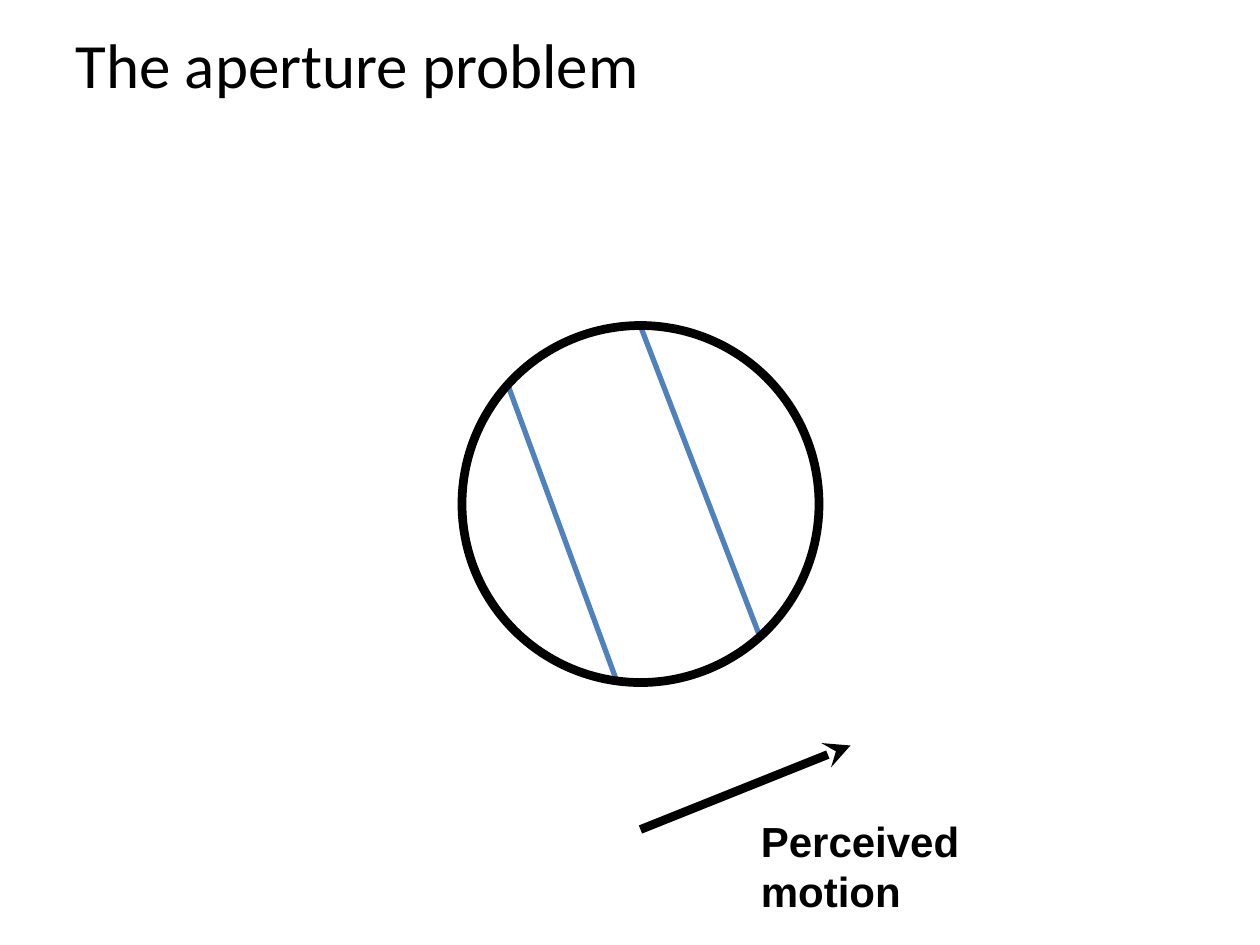
"""Build the aperture problem slide."""
from typing import NamedTuple, Optional

from lxml.etree import SubElement
from pptx import Presentation
from pptx.dml.color import RGBColor
from pptx.enum.shapes import MSO_CONNECTOR as Connector, MSO_SHAPE as Shape
from pptx.enum.text import MSO_ANCHOR as Anchor, MSO_AUTO_SIZE as AutoSize, PP_ALIGN as Align
from pptx.oxml.ns import qn
from pptx.util import Pt

BLACK = "000000"
BLUE = "4F81BD"


class Line(NamedTuple):
    start: tuple[float, float]
    end: tuple[float, float]
    color: str
    width: float
    arrowhead: Optional[str] = None


GRATING = [
    Line((290.88, 221.76), (352.8, 390.24), BLUE, 3),
    Line((365.76, 185.76), (434.16, 363.6), BLUE, 3),
]
MOTION_ARROW = Line((366, 474), (486, 426), BLACK, 5, "stealth")


def rgb(color: str) -> RGBColor:
    return RGBColor.from_string(color)


def place(shape, left: float, top: float, width: float, height: float) -> None:
    shape.left, shape.top = Pt(left), Pt(top)
    shape.width, shape.height = Pt(width), Pt(height)


def draw_line(slide, line: Line) -> None:
    connector = slide.shapes.add_connector(
        Connector.STRAIGHT, *map(Pt, line.start + line.end))
    connector.line.color.rgb = rgb(line.color)
    connector.line.width = Pt(line.width)
    if line.arrowhead:
        SubElement(connector.line._get_or_add_ln(), qn("a:tailEnd"), type=line.arrowhead)
    SubElement(connector._element.spPr, qn("a:effectLst"))


def draw_aperture(slide) -> None:
    aperture = slide.shapes.add_shape(Shape.OVAL, Pt(264), Pt(186), Pt(204), Pt(204))
    aperture.shadow.inherit = False
    aperture.fill.background()
    aperture.line.color.rgb = rgb(BLACK)
    aperture.line.width = Pt(5)


def write(shape, text: str, font_name: str, size: float, bold: bool, anchor: Anchor) -> None:
    frame = shape.text_frame
    frame.text = text
    frame.word_wrap = True
    frame.auto_size = AutoSize.NONE
    frame.vertical_anchor = anchor
    paragraph = frame.paragraphs[0]
    paragraph.alignment = Align.LEFT
    font = paragraph.runs[0].font
    font.name, font.size, font.bold = font_name, Pt(size), bold
    font.color.rgb = rgb(BLACK)


def main() -> None:
    presentation = Presentation()
    presentation.slide_width, presentation.slide_height = Pt(720), Pt(540)
    slide = presentation.slides.add_slide(presentation.slide_layouts[5])

    title = slide.shapes.title
    place(title, 36, 0, 648, 72)
    write(title, "The aperture problem", "Calibri", 36, False, Anchor.MIDDLE)

    for line in GRATING:
        draw_line(slide, line)
    draw_aperture(slide)
    draw_line(slide, MOTION_ARROW)

    label = slide.shapes.add_textbox(Pt(427.68), Pt(462.24), Pt(203), Pt(36))
    write(label, "Perceived motion", "Arial", 24, True, Anchor.TOP)

    presentation.save("out.pptx")


if __name__ == "__main__":
    main()
